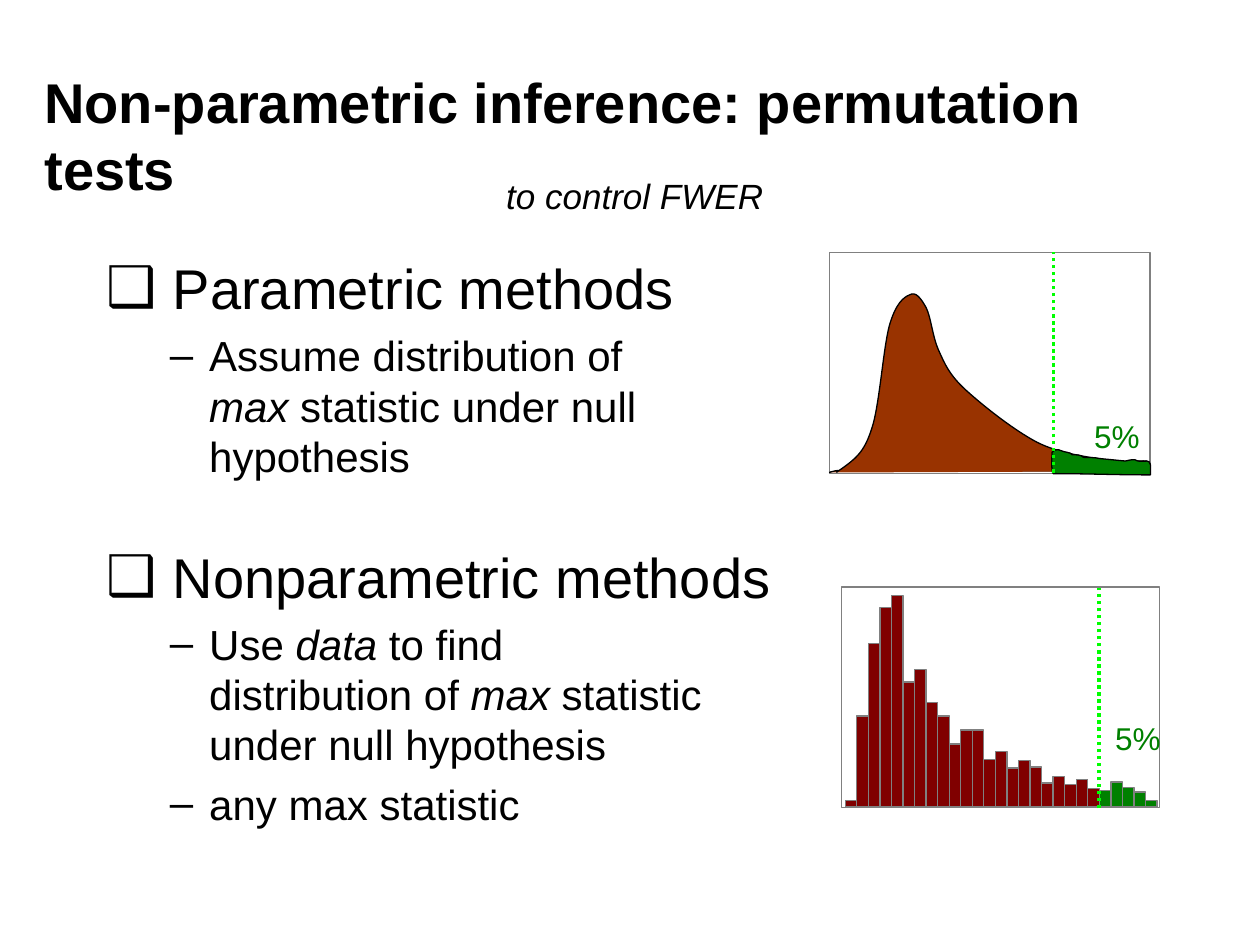
from dataclasses import dataclass

from lxml import etree
from pptx import Presentation
from pptx.dml.color import RGBColor
from pptx.enum.dml import MSO_LINE
from pptx.enum.shapes import MSO_CONNECTOR, MSO_SHAPE
from pptx.enum.text import MSO_ANCHOR, PP_ALIGN
from pptx.oxml.ns import qn
from pptx.util import Pt

RECTANGLE = MSO_SHAPE.RECTANGLE
STRAIGHT = MSO_CONNECTOR.STRAIGHT
DOTTED = MSO_LINE.ROUND_DOT
TOP, MIDDLE = MSO_ANCHOR.TOP, MSO_ANCHOR.MIDDLE
LEFT, CENTER = PP_ALIGN.LEFT, PP_ALIGN.CENTER


@dataclass(frozen=True)
class Theme:
    font: str = "Arial"
    heading: int = 32
    body: int = 24
    subtitle: int = 20
    label: int = 18
    ink: str = "000000"
    paper: str = "FFFFFF"
    frame: str = "808080"
    density: str = "993300"
    bar: str = "800000"
    tail: str = "008000"
    threshold: str = "00FF00"
    hairline: float = 0.75


THEME = Theme()

METHODS = [
    (0, "Parametric methods", 0),
    (1, "Assume distribution of\n*max* statistic under null\nhypothesis", 5),
    (0, "Nonparametric methods", 35),
    (1, "Use *data* to find\ndistribution of *max* statistic\nunder null hypothesis", 5),
    (1, "any max statistic", 5),
]
LEVELS = [("❑", 37.7, 37.7, THEME.heading), ("–", 58.5, 22.5, THEME.body)]

DENSITY_START = (473.8, 270)
DENSITY_CURVES = [
    (485.3, 266.4, 473, 272.9, 481, 267.8),
    (488.9, 262.1, 493.9, 258.5, 498.2, 244.8),
    (502.6, 231.8, 504.7, 198.7, 508.3, 185.8),
    (511.9, 173.5, 516.2, 169.9, 519.8, 168.5),
    (523.4, 166.3, 526.3, 170.6, 529.2, 175.7),
    (532.1, 181.4, 532.8, 192.2, 536.4, 200.2),
    (540, 208.1, 542.2, 213.8, 551.5, 222.5),
    (560.9, 231.1, 578.9, 245.5, 592.6, 252.7),
    (605.5, 259.2, 619.9, 260.6, 630.7, 262.8),
    (640.8, 265, 650.9, 262.8, 655.2, 263.5),
    (659.5, 265, 655.9, 267.8, 656.6, 269.3),
]
TAIL_START = (657.4, 271.4)
TAIL_CURVES = [
    (657.4, 269.3, 657.4, 267.1, 657.4, 265.7),
    (656.6, 262.1, 655.2, 264.2, 650.2, 263.5),
    (648, 262.1, 646.6, 262.8, 643, 263.5),
    (643, 263.5, 628.6, 262.1, 628.6, 262.1),
    (625.7, 261.4, 621.4, 261.4, 619.2, 261.4),
    (617.8, 259.9, 614.9, 259.9, 612.7, 259.9),
    (612, 258.5, 608.4, 258.5, 607, 257.8),
    (605.5, 257.8, 606.2, 257.8, 604.8, 257),
    (603.5, 257, 602.6, 257, 601.2, 258.5),
    (601.2, 260.6, 600.5, 269.3, 601.9, 270.7),
    (622.8, 270.7, 636.5, 271.4, 657.4, 271.4),
]

BULK_HEIGHTS = [3.6, 52, 93.5, 114, 120.8, 71.4, 78.5, 59.8, 52, 36, 44, 44, 27.2, 31.7,
                22.3, 26.8, 23, 13.7, 17.5, 13, 15.8, 10.8]
TAIL_HEIGHTS = [9.4, 14.3, 11, 8.6, 3.6]
BAR_LEFT, BAR_STEP, BAR_BASE = 483, 6.6, 461.2


class SlideBuilder:
    """Draw themed elements on the current slide."""

    def __init__(self, slide, theme):
        self.shapes = slide.shapes
        self.theme = theme

    def paint(self, shape, fill, line):
        shape.shadow.inherit = False
        shape.fill.solid()
        shape.fill.fore_color.rgb = RGBColor.from_string(fill)
        shape.line.color.rgb = RGBColor.from_string(line)
        shape.line.width = Pt(self.theme.hairline)

    def rectangle(self, box, fill):
        self.paint(self.shapes.add_shape(RECTANGLE, *map(Pt, box)), fill, self.theme.frame)

    def curve(self, start, curves, fill, close):
        builder = self.shapes.build_freeform(*map(Pt, start))
        controls = [(Pt(c[i]), Pt(c[i + 1])) for c in curves for i in (0, 2, 4)]
        builder.add_line_segments(controls, close=close)
        shape = builder.convert_to_shape()
        segments = list(shape._element.iter(qn("a:lnTo")))
        for first in range(0, len(segments), 3):
            bezier = etree.Element(qn("a:cubicBezTo"))
            segments[first].addprevious(bezier)
            for segment in segments[first:first + 3]:
                bezier.append(segment[0])
                segment.getparent().remove(segment)
        self.paint(shape, fill, self.theme.ink)

    def line(self, start, end, color, width, dash=None):
        connector = self.shapes.add_connector(STRAIGHT, *map(Pt, start + end))
        connector.line.color.rgb = RGBColor.from_string(color)
        connector.line.width = Pt(width)
        if dash:
            connector.line.dash_style = dash
        etree.SubElement(connector._element.spPr, qn("a:effectLst"))

    def style(self, font, size, color, bold=False, italic=False):
        font.name = self.theme.font
        font.size = Pt(size)
        font.color.rgb = RGBColor.from_string(color)
        font.bold = bold
        font.italic = italic

    def frame(self, box, anchor=TOP):
        text_frame = self.shapes.add_textbox(*map(Pt, box)).text_frame
        text_frame.word_wrap = True
        text_frame.vertical_anchor = anchor
        return text_frame

    def text(self, box, words, size, color, align=LEFT, anchor=TOP, **emphasis):
        text_frame = self.frame(box, anchor)
        text_frame.text = words
        paragraph = text_frame.paragraphs[0]
        paragraph.alignment = align
        self.style(paragraph.runs[0].font, size, color, **emphasis)

    def outline(self, box, items):
        text_frame = self.frame(box)
        for index, (level, words, gap) in enumerate(items):
            paragraph = text_frame.add_paragraph() if index else text_frame.paragraphs[0]
            bullet, margin, hanging, size = LEVELS[level]
            paragraph.level = level
            paragraph.space_before = Pt(gap)
            properties = paragraph._p.get_or_add_pPr()
            properties.set("marL", str(Pt(margin)))
            properties.set("indent", str(-Pt(hanging)))
            etree.SubElement(properties, qn("a:buFont"), typeface=self.theme.font)
            etree.SubElement(properties, qn("a:buChar"), char=bullet)
            for part, phrase in enumerate(words.split("*")):
                for row, fragment in enumerate(phrase.split("\n")):
                    if row:
                        paragraph.add_line_break()
                    if fragment:
                        run = paragraph.add_run()
                        run.text = fragment
                        self.style(run.font, size, self.theme.ink, italic=part % 2 == 1)

    def threshold(self, x, top, bottom, label_box):
        self.line((x, bottom), (x, top), self.theme.threshold, 2, DOTTED)
        self.text(label_box, "5%", self.theme.label, self.theme.tail, CENTER)


def main():
    presentation = Presentation()
    presentation.slide_width, presentation.slide_height = Pt(720), Pt(540)
    slide = presentation.slides.add_slide(presentation.slide_layouts[6])
    draw = SlideBuilder(slide, THEME)

    draw.text((18.3, 45.6, 690, 62.6), "Non-parametric inference: permutation tests",
              THEME.heading, THEME.ink, anchor=MIDDLE, bold=True)

    draw.rectangle((474.2, 144.4, 183, 126), THEME.paper)
    draw.line((656.6, 269.5), (474.4, 269.5), THEME.frame, THEME.hairline)
    draw.curve(DENSITY_START, DENSITY_CURVES, THEME.density, close=False)
    draw.curve(TAIL_START, TAIL_CURVES, THEME.tail, close=True)
    draw.threshold(602, 144, 270, (610.6, 234.7, 55.4, 28.8))

    draw.rectangle((481, 335.5, 181.5, 126), THEME.paper)
    for index, height in enumerate(BULK_HEIGHTS + TAIL_HEIGHTS):
        color = THEME.bar if index < len(BULK_HEIGHTS) else THEME.tail
        draw.rectangle((BAR_LEFT + index * BAR_STEP, BAR_BASE - height, BAR_STEP, height), color)
    draw.threshold(628, 336, 462, (622.6, 407.5, 55.4, 28.8))

    draw.outline((54, 141.5, 396, 350.6), METHODS)
    draw.text((282.2, 96.2, 163, 31.7), "to control FWER",
              THEME.subtitle, THEME.ink, italic=True)
    presentation.save("out.pptx")


if __name__ == "__main__":
    main()
